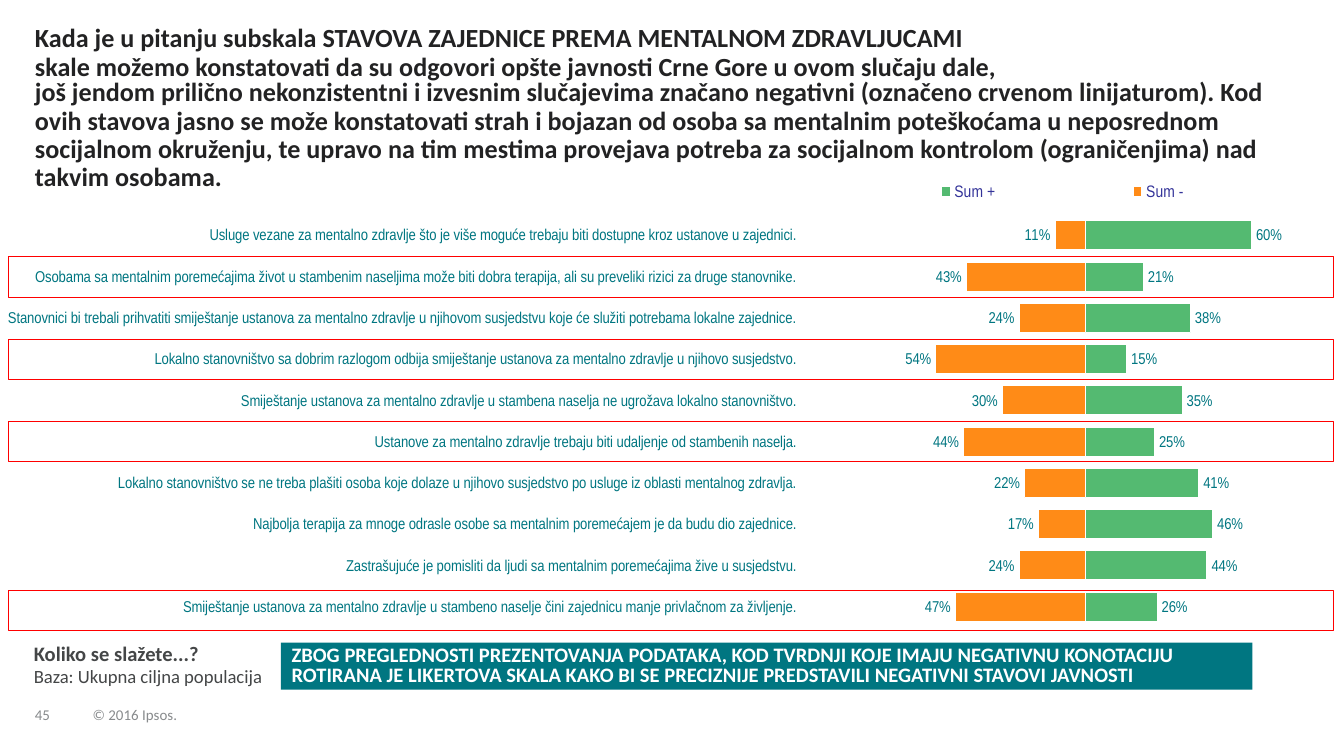
from lxml.etree import SubElement
from pptx import Presentation
from pptx.chart.data import CategoryChartData
from pptx.dml.color import RGBColor
from pptx.enum.chart import (XL_CHART_TYPE, XL_LABEL_POSITION, XL_LEGEND_POSITION,
                             XL_TICK_LABEL_POSITION, XL_TICK_MARK)
from pptx.enum.shapes import MSO_SHAPE
from pptx.enum.text import MSO_ANCHOR, PP_ALIGN
from pptx.oxml.ns import qn
from pptx.util import Cm, Pt

COLORS = {
    "title": "222223", "body": "444647", "footer": "888B8D", "teal": "007681",
    "white": "FFFFFF", "negative": "FF8B17", "positive": "54BA71",
    "legend": "333399", "frame": "FF0000",
}
TEXT_FONT = "Calibri"
CHART_FONT = "Arial"

TITLE = ("Kada je u pitanju subskala STAVOVA ZAJEDNICE PREMA MENTALNOM ZDRAVLJUCAMI "
         "skale možemo konstatovati da su odgovori opšte javnosti Crne Gore u ovom slučaju dale,")
TITLE_REST = ("još jendom prilično nekonzistentni i izvesnim slučajevima značano negativni "
              "(označeno crvenom linijaturom). Kod ovih stavova jasno se može konstatovati "
              "strah i bojazan od osoba sa mentalnim poteškoćama u neposrednom socijalnom "
              "okruženju, te upravo na tim mestima provejava potreba za socijalnom kontrolom "
              "(ograničenjima) nad takvim osobama.")
NOTICE = ("ZBOG PREGLEDNOSTI PREZENTOVANJA PODATAKA, KOD TVRDNJI KOJE IMAJU NEGATIVNU "
          "KONOTACIJU ROTIRANA JE LIKERTOVA SKALA KAKO BI SE PRECIZNIJE PREDSTAVILI "
          "NEGATIVNI STAVOVI JAVNOSTI")

# statement, Sum -, Sum +
STATEMENTS = [
    ("Usluge vezane za mentalno zdravlje što je više moguće trebaju biti dostupne kroz "
     "ustanove u zajednici.", -11, 60),
    ("Osobama sa mentalnim poremećajima život u stambenim naseljima može biti dobra "
     "terapija, ali su preveliki rizici za druge stanovnike.", -43, 21),
    ("Stanovnici bi trebali prihvatiti smiještanje ustanova za mentalno zdravlje u njihovom "
     "susjedstvu koje će služiti potrebama lokalne zajednice.", -24, 38),
    ("Lokalno stanovništvo sa dobrim razlogom odbija smiještanje ustanova za mentalno "
     "zdravlje u njihovo susjedstvo.", -54, 15),
    ("Smiještanje ustanova za mentalno zdravlje u stambena naselja ne ugrožava lokalno "
     "stanovništvo.", -30, 35),
    ("Ustanove za mentalno zdravlje trebaju biti udaljenje od stambenih naselja.", -44, 25),
    ("Lokalno stanovništvo se ne treba plašiti osoba koje dolaze u njihovo susjedstvo po "
     "usluge iz oblasti mentalnog zdravlja.", -22, 41),
    ("Najbolja terapija za mnoge odrasle osobe sa mentalnim poremećajem je da budu dio "
     "zajednice.", -17, 46),
    ("Zastrašujuće je pomisliti da ljudi sa mentalnim poremećajima žive u susjedstvu.",
     -24, 44),
    ("Smiještanje ustanova za mentalno zdravlje u stambeno naselje čini zajednicu manje "
     "privlačnom za življenje.", -47, 26),
]


def color(name):
    return RGBColor.from_string(COLORS[name])


def style_font(font, size, color_name, name=TEXT_FONT, bold=False):
    font.size = Pt(size)
    font.name = name
    font.bold = bold
    font.color.rgb = color(color_name)


def write_lines(shape, lines, color_name, spacing, anchor=MSO_ANCHOR.TOP, wrap=True, left=0):
    """Fill one paragraph with (text, size, bold) runs, one run to a line."""
    frame = shape.text_frame
    frame.margin_left = Cm(left)
    frame.margin_top = frame.margin_right = frame.margin_bottom = 0
    frame.word_wrap = wrap
    frame.vertical_anchor = anchor
    paragraph = frame.paragraphs[0]
    paragraph.alignment = PP_ALIGN.LEFT
    paragraph.line_spacing = spacing
    for index, (text, size, bold) in enumerate(lines):
        if index:
            paragraph.add_line_break()
        run = paragraph.add_run()
        run.text = text
        style_font(run.font, size, color_name, bold=bold)


def add_text(slide, box, lines, color_name, spacing, **options):
    shape = slide.shapes.add_textbox(*map(Cm, box))
    write_lines(shape, lines, color_name, spacing, **options)


def add_rectangle(slide, box, fill=None, line=None):
    shape = slide.shapes.add_shape(MSO_SHAPE.RECTANGLE, *map(Cm, box))
    shape.shadow.inherit = False
    if fill:
        shape.fill.solid()
        shape.fill.fore_color.rgb = color(fill)
    else:
        shape.fill.background()
    if line:
        shape.line.color.rgb = color(line)
        shape.line.width = Pt(0.25)
    else:
        shape.line.fill.background()
    return shape


def set_layout(element, x, y, width, height, inner=False):
    """Place a plot area or legend by fractions of the chart."""
    layout = element.find(qn("c:layout"))
    if layout is None:
        layout = element.makeelement(qn("c:layout"))
        if inner:
            element.insert(0, layout)
        else:
            element.find(qn("c:legendPos")).addnext(layout)
    manual = SubElement(layout, qn("c:manualLayout"))
    settings = [("layoutTarget", "inner")] if inner else []
    settings += [("xMode", "edge"), ("yMode", "edge"),
                 ("x", x), ("y", y), ("w", width), ("h", height)]
    for tag, value in settings:
        SubElement(manual, qn(f"c:{tag}")).set("val", str(value))


def style_series(series, color_name, number_format):
    series.format.fill.solid()
    series.format.fill.fore_color.rgb = color(color_name)
    series.format.line.color.rgb = color("white")
    series.format.line.width = Pt(1)
    series.invert_if_negative = False
    labels = series.data_labels
    labels.show_value = True
    labels.position = XL_LABEL_POSITION.OUTSIDE_END
    labels.number_format = number_format
    labels.number_format_is_linked = False
    style_font(labels.font, 8.4, "teal", CHART_FONT)


def add_statement_chart(slide, box):
    statements, negatives, positives = zip(*STATEMENTS)
    data = CategoryChartData()
    data.categories = statements
    data.add_series("Sum -", negatives)
    data.add_series("Sum +", positives)
    chart = slide.shapes.add_chart(XL_CHART_TYPE.BAR_CLUSTERED, *map(Cm, box), data).chart
    chart.has_title = False
    style_font(chart.font, 9.7, "legend", CHART_FONT)

    plot = chart.plots[0]
    plot.gap_width = 40
    plot.overlap = 100
    plot.vary_by_categories = False
    style_series(plot.series[0], "negative", '0"%";0"%"')
    style_series(plot.series[1], "positive", '0"%"')

    category_axis = chart.category_axis
    category_axis.reverse_order = True
    category_axis.tick_label_position = XL_TICK_LABEL_POSITION.LOW
    category_axis.major_tick_mark = XL_TICK_MARK.OUTSIDE
    category_axis.format.line.fill.background()
    style_font(category_axis.tick_labels.font, 8.4, "teal", CHART_FONT)
    value_axis = chart.value_axis
    value_axis.minimum_scale, value_axis.maximum_scale = -100, 100
    value_axis.has_major_gridlines = False
    value_axis.visible = False

    chart.has_legend = True
    legend = chart.legend
    legend.position = XL_LEGEND_POSITION.TOP
    legend.include_in_layout = False
    style_font(legend.font, 8.9, "legend", CHART_FONT)
    set_layout(legend._element, 0.51, 0.01, 0.45, 0.08)
    set_layout(chart._chartSpace.chart.plotArea, 0.51, 0.1, 0.49, 0.89, inner=True)


def main():
    presentation = Presentation()
    presentation.slide_width, presentation.slide_height = Cm(25.4), Cm(14.28)
    slide = presentation.slides.add_slide(presentation.slide_layouts[6])

    for left, width, text in [(0.66, 0.86, "45"), (1.75, 1.93, "© 2016 Ipsos.")]:
        add_text(slide, (left, 13.2, width, 0.46), [(text, 8, False)], "footer", 0.85,
                 anchor=MSO_ANCHOR.BOTTOM, wrap=False)
    add_text(slide, (0.66, 0.48, 18.21, 1.07), [(TITLE, 14, True)], "title", 0.9)
    add_text(slide, (0.64, 12.14, 7.7, 0.89),
             [("Koliko se slažete...?", 11, True), ("Baza: Ukupna ciljna populacija", 10, False)],
             "body", 0.95)
    add_text(slide, (0.66, 1.5, 24.13, 2.16), [(TITLE_REST, 14, True)], "title", 0.9)
    add_statement_chart(slide, (0.15, 3.18, 25.6, 8.76))
    notice = add_rectangle(slide, (5.31, 12.14, 18.36, 0.89), fill="teal")
    write_lines(notice, [(NOTICE, 11, True)], "white", 0.85,
                anchor=MSO_ANCHOR.MIDDLE, left=0.2)
    for top in (4.85, 6.4, 7.95, 11.15):
        add_rectangle(slide, (0.15, top, 25.04, 0.76), line="frame")

    presentation.save("out.pptx")


if __name__ == "__main__":
    main()
